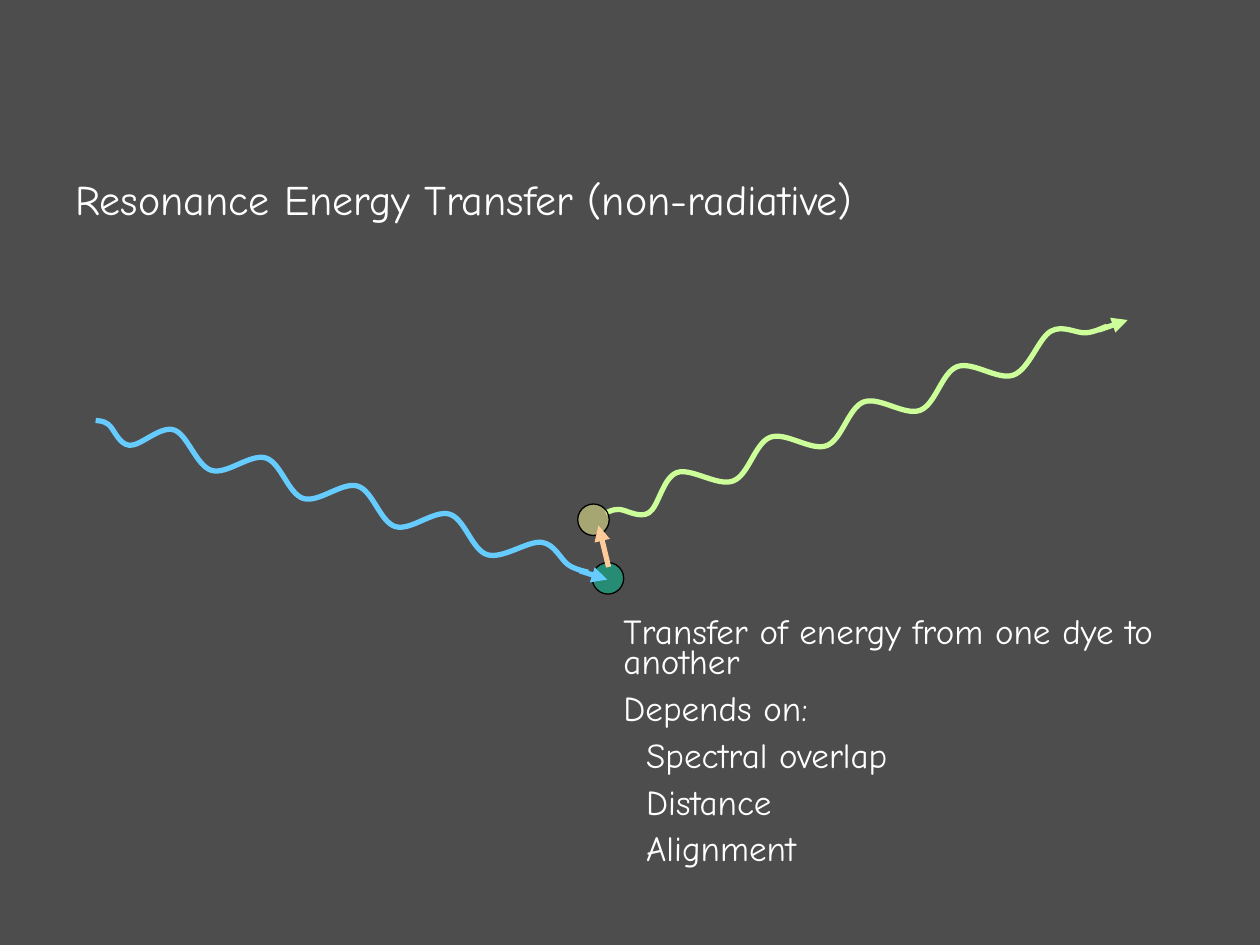
from dataclasses import dataclass
from lxml.etree import SubElement
from pptx import Presentation
from pptx.dml.color import RGBColor as Rgb
from pptx.enum.shapes import MSO_CONNECTOR as Conn, MSO_SHAPE as Form
from pptx.enum.text import MSO_ANCHOR as Anchor
from pptx.oxml.ns import qn
from pptx.util import Inches, Pt

Point = tuple[float, float]

# Grid: 100 columns by 75 rows
COLS, ROWS = 100, 75
WIDTH, HEIGHT = Inches(10), Inches(7.5)
FONT = "Comic Neue"
SWING = 1.1  # rows from a wave's axis to a crest
HUES = {
    "back": "4D4D4D", "text": "FFFFFF", "edge": "000000",
    "donor": "00CC99", "taker": "FFFF99",
    "blue": "66CCFF", "green": "CCFF99", "peach": "FFCC99",
}


@dataclass
class Dye:
    at: Point
    hue: str


@dataclass
class Arrow:
    start: Point
    end: Point
    hue: str


@dataclass
class Wave:
    """A level wave, measured in columns from its centre, then turned."""
    center: Point
    turn: float
    head: list[Point]
    crest: float
    trough: float
    step: float
    tail: list[Point]
    arrow: Arrow


@dataclass
class Note:
    at: Point
    size: Point
    points: int
    lines: list[tuple[str, float]]  # wording and indent in columns
    pitch: float = 1.0
    gap: float = 0
    inset: float = 0.5  # rows above the text


def col(n: float) -> int:
    return round(WIDTH * n / COLS)


def row(n: float) -> int:
    return round(HEIGHT * n / ROWS)


def color(name: str) -> Rgb:
    return Rgb.from_string(HUES[name])


def draw_line(shape, hue: str, width: float) -> None:
    shape.line.color.rgb = color(hue)
    shape.line.width = Pt(width)


def add_dye(slide, dye: Dye) -> None:
    x, y = dye.at
    disc = slide.shapes.add_shape(Form.OVAL, col(x), row(y), col(2.5), row(2.5))
    disc.shadow.inherit = False
    disc.fill.solid()
    disc.fill.fore_color.rgb = color(dye.hue)
    tint = disc.fill._xPr.find(".//" + qn("a:srgbClr"))
    SubElement(tint, qn("a:alpha"), val="50000")
    draw_line(disc, "edge", 0.75)


def add_arrow(slide, arrow: Arrow) -> None:
    (x, y), (u, v) = arrow.start, arrow.end
    line = slide.shapes.add_connector(Conn.STRAIGHT, col(x), row(y), col(u), row(v))
    draw_line(line, arrow.hue, 3)
    SubElement(line.line._get_or_add_ln(), qn("a:tailEnd"), type="triangle")
    SubElement(line._element.spPr, qn("a:effectLst"))


def smooth(shape) -> None:
    """Turn the straight segments into a Catmull-Rom curve."""
    path = shape._element.spPr.find(".//" + qn("a:path"))
    knots = [(int(p.get("x")), int(p.get("y"))) for p in path.iter(qn("a:pt"))]
    ends = [knots[0], *knots, knots[-1]]
    for line in path.findall(qn("a:lnTo")):
        path.remove(line)
    for a, b, c, d in zip(ends, ends[1:], ends[2:], ends[3:]):
        bend = SubElement(path, qn("a:cubicBezTo"))
        leave = [q + (r - p) / 6 for p, q, r in zip(a, b, c)]
        reach = [q - (r - p) / 6 for p, q, r in zip(b, c, d)]
        for x, y in (leave, reach, c):
            SubElement(bend, qn("a:pt"), x=str(round(x)), y=str(round(y)))


def add_wave(slide, wave: Wave) -> None:
    # Five crests with four troughs between them, evenly stepped
    turns = [(base + i * wave.step, side) for i in range(5)
             for base, side in ((wave.crest, -SWING), (wave.trough, SWING))][:-1]
    x, y = wave.center
    knots = [(col(x + u), row(y + v)) for u, v in wave.head + turns + wave.tail]
    pen = slide.shapes.build_freeform(*knots[0], scale=1.0)
    pen.add_line_segments(knots[1:], close=False)
    curve = pen.convert_to_shape()
    smooth(curve)
    curve.rotation = wave.turn
    curve.shadow.inherit = False
    curve.fill.background()
    draw_line(curve, wave.arrow.hue, 3)
    add_arrow(slide, wave.arrow)


def add_note(slide, note: Note) -> None:
    (x, y), (w, h) = note.at, note.size
    frame = slide.shapes.add_textbox(col(x), row(y), col(w), row(h)).text_frame
    frame.word_wrap = True
    frame.vertical_anchor = Anchor.MIDDLE
    frame.margin_top = row(note.inset)
    frame.text = "\n".join(text for text, _ in note.lines)
    for i, (para, (_, indent)) in enumerate(zip(frame.paragraphs, note.lines)):
        para.line_spacing = note.pitch
        para.space_before = Pt(note.gap if i else 0)
        para._p.get_or_add_pPr().set("marL", str(col(indent)))
        font = para.runs[0].font
        font.name, font.size = FONT, Pt(note.points)
        font.color.rgb = color("text")


# Content
DONOR = Dye((47, 44.65), "donor")
TAKER = Dye((45.85, 40), "taker")
LIGHT_IN = Wave(
    center=(27.15, 39.35), turn=17,
    head=[(-20.45, 0), (-19.4, 0), (-17.3, SWING)],
    crest=-14.3, trough=-10.5, step=7.63,
    tail=[(18.8, 0), (20.45, 0.1)],
    arrow=Arrow((46, 45.3), (48.2, 46), "blue"))
LIGHT_OUT = Wave(
    center=(67.95, 33.3), turn=339.3,
    head=[(-21.2, -0.1), (-20.15, 0), (-18, SWING)],
    crest=-14.8, trough=-10.85, step=7.93,
    tail=[(19.5, 0), (21.25, 0.1)],
    arrow=Arrow((87.2, 26.2), (89.5, 25.4), "green"))
TRANSFER = Arrow((48.3, 45), (47.5, 41.7), "peach")
TITLE = Note((5, 5.2), (82.5, 19.6), 24,
             [("Resonance Energy Transfer (non-radiative)", 0)], inset=2)
FACTS = Note((48.5, 46.6), (47.4, 25), 20, [
    ("Transfer of energy from one dye to another", 0),
    ("Depends on:", 0),
    ("Spectral overlap", 1.8),
    ("Distance", 1.8),
    ("Alignment", 1.8),
], pitch=0.7, gap=10)


def main() -> None:
    deck = Presentation()
    deck.slide_width, deck.slide_height = WIDTH, HEIGHT
    slide = deck.slides.add_slide(deck.slide_layouts[6])
    slide.background.fill.solid()
    slide.background.fill.fore_color.rgb = color("back")

    # Drawn from back to front
    add_dye(slide, DONOR)
    add_note(slide, TITLE)
    add_wave(slide, LIGHT_IN)
    add_wave(slide, LIGHT_OUT)
    add_note(slide, FACTS)
    add_dye(slide, TAKER)
    add_arrow(slide, TRANSFER)
    deck.save("out.pptx")


if __name__ == "__main__":
    main()
